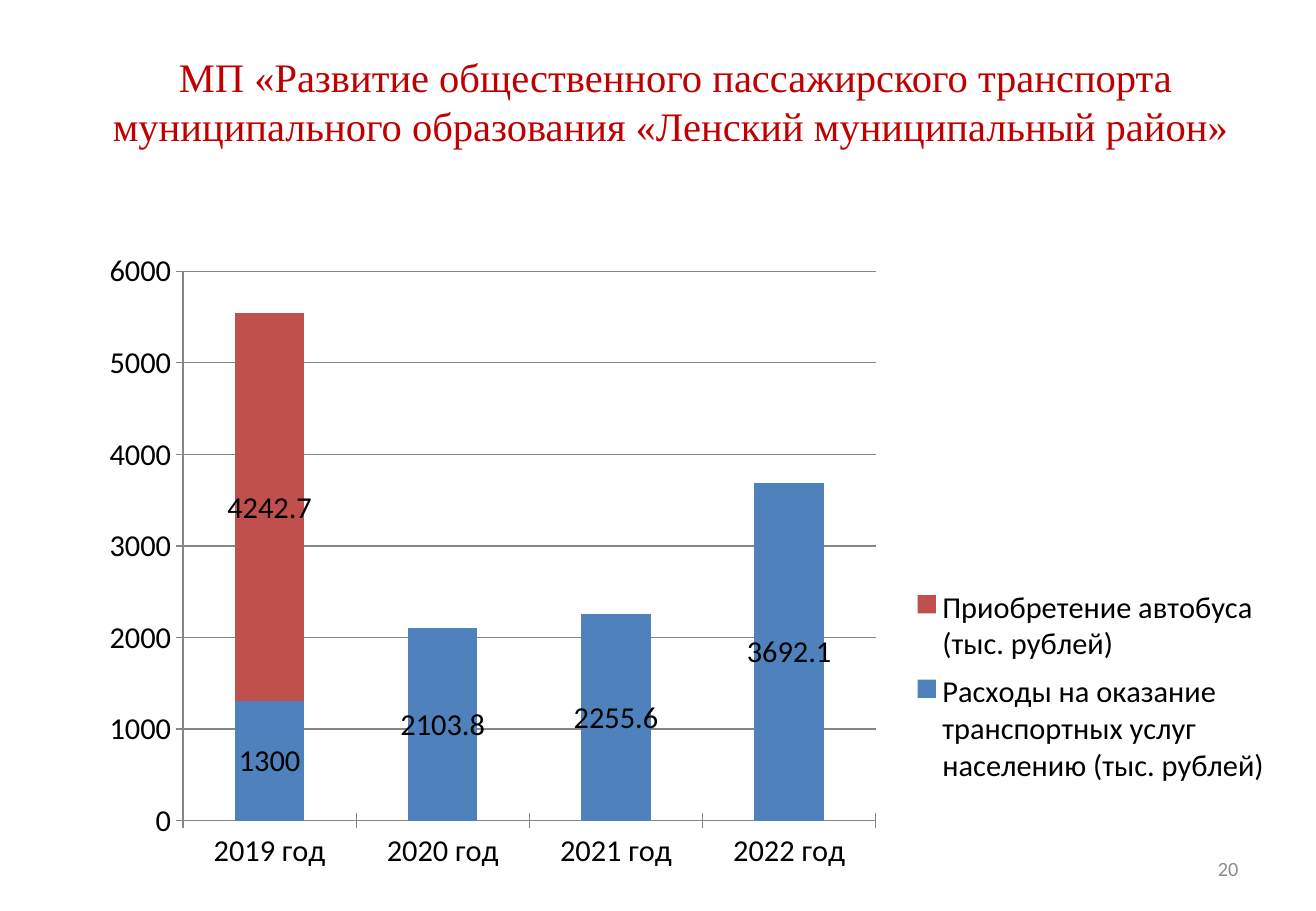
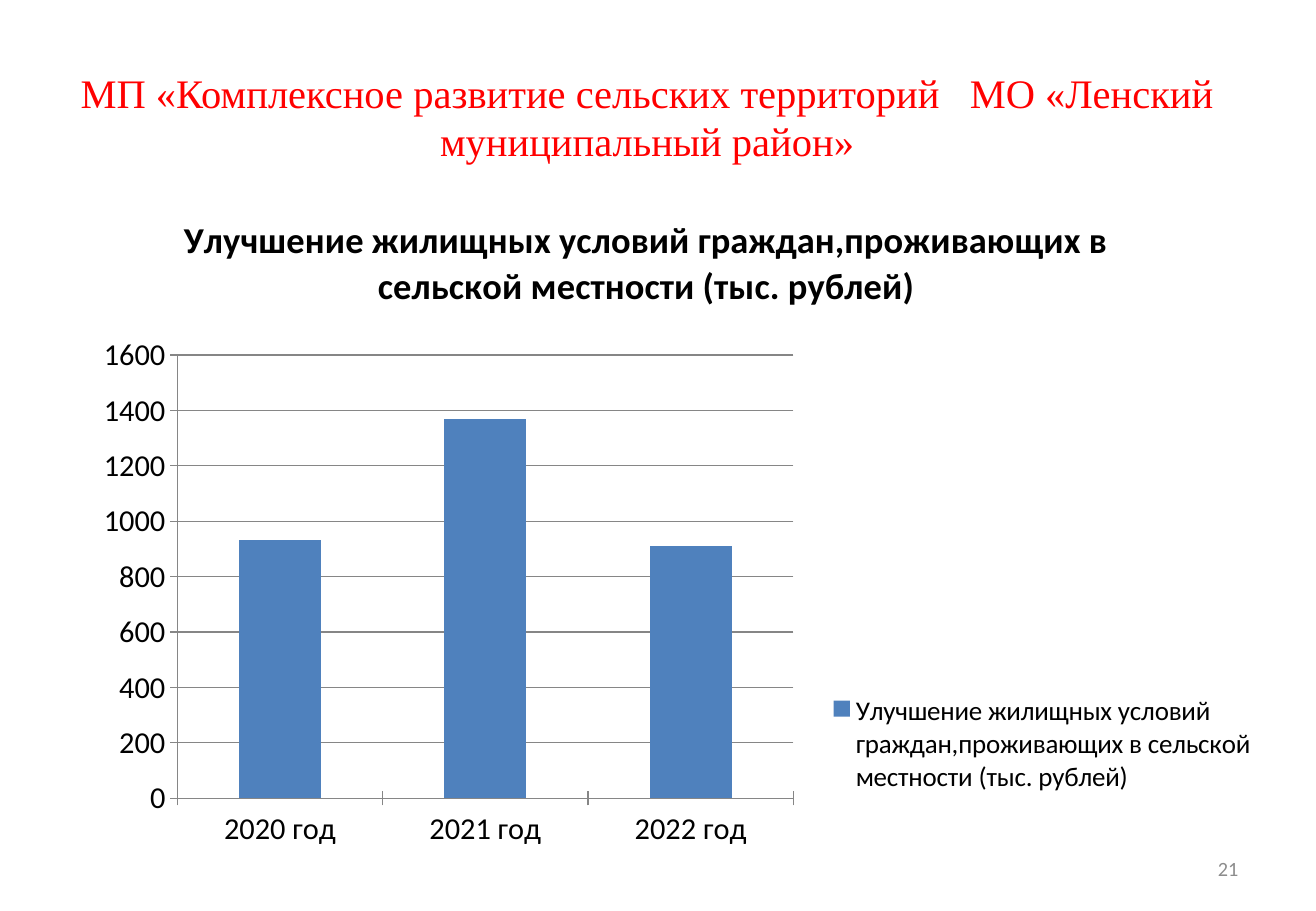
"""Builds two slides with stacked column charts of municipal programme spending."""
from dataclasses import dataclass
from typing import Optional

from lxml import etree
from pptx import Presentation
from pptx.chart.data import CategoryChartData
from pptx.dml.color import RGBColor
from pptx.enum.chart import XL_CHART_TYPE, XL_LEGEND_POSITION, XL_TICK_MARK
from pptx.enum.text import MSO_ANCHOR, PP_ALIGN
from pptx.oxml.ns import qn
from pptx.util import Inches, Pt

STACKED = XL_CHART_TYPE.COLUMN_STACKED
LEGEND_RIGHT = XL_LEGEND_POSITION.RIGHT
TICK_CROSS = XL_TICK_MARK.CROSS
TOP, MIDDLE = MSO_ANCHOR.TOP, MSO_ANCHOR.MIDDLE
CENTER, RIGHT = PP_ALIGN.CENTER, PP_ALIGN.RIGHT

BLACK = RGBColor(0x00, 0x00, 0x00)
GRAY = RGBColor(0x8C, 0x8C, 0x8C)
AXIS_GRAY = RGBColor(0x86, 0x86, 0x86)
DARK_RED = RGBColor(0xC0, 0x00, 0x00)
RED = RGBColor(0xFF, 0x00, 0x00)
BLUE = RGBColor(0x4F, 0x81, 0xBD)
BRICK = RGBColor(0xC0, 0x50, 0x4D)
SERIES_COLORS = (BLUE, BRICK)

BODY_FONT = "Calibri"
TITLE_FONT = "Times New Roman"
NUMBER_BOX = (7.76, 6.95, 2.53, 0.4)
HOUSING = "Улучшение жилищных условий граждан,проживающих в сельской местности (тыс. рублей)"

Box = tuple[float, float, float, float]


@dataclass(frozen=True)
class Series:
    name: str
    values: tuple[Optional[float], ...]


@dataclass(frozen=True)
class ChartSlide:
    number: int
    title: str
    title_color: RGBColor
    title_box: Box
    chart_box: Box
    plot_layout: Box
    legend_layout: Box
    legend_size: int
    categories: tuple[str, ...]
    series: tuple[Series, ...]
    axis_max: int
    axis_step: int
    show_values: bool = False
    chart_title: str = ""


SLIDES = (
    ChartSlide(
        number=20,
        title="МП «Развитие общественного пассажирского транспорта "
              "муниципального образования «Ленский муниципальный район» ",
        title_color=DARK_RED,
        title_box=(0.56, 0.38, 10, 0.91),
        chart_box=(0.72, 1.97, 9.83, 5.26),
        plot_layout=(0.08, 0.05, 0.58, 0.86),
        legend_layout=(0.69, 0.53, 0.3, 0.34),
        legend_size=18,
        categories=("2019 год", "2020 год", "2021 год", "2022 год"),
        series=(
            Series("Расходы на оказание транспортных услуг населению (тыс. рублей)",
                   (1300, 2103.8, 2255.6, 3692.1)),
            Series("Приобретение автобуса (тыс. рублей)", (4242.7, None, None, None)),
        ),
        axis_max=6000,
        axis_step=1000,
        show_values=True,
    ),
    ChartSlide(
        number=21,
        title="МП «Комплексное развитие сельских территорий   МО «Ленский муниципальный район»",
        title_color=RED,
        title_box=(0.47, 0.51, 9.71, 0.91),
        chart_box=(0.68, 1.54, 9.75, 5.53),
        plot_layout=(0.08, 0.25, 0.52, 0.66),
        legend_layout=(0.63, 0.74, 0.36, 0.18),
        legend_size=16,
        categories=("2020 год", "2021 год", "2022 год"),
        series=(Series(HOUSING, (930, 1370, 910)),),
        axis_max=1600,
        axis_step=200,
        chart_title=HOUSING,
    ),
)


def add_text(s, box: Box, text: str, font: str, size: int, color: RGBColor,
             align: PP_ALIGN, anchor: MSO_ANCHOR) -> None:
    tf = s.shapes.add_textbox(*map(Inches, box)).text_frame
    tf.word_wrap = True
    tf.vertical_anchor = anchor
    p = tf.paragraphs[0]
    p.text = text
    p.alignment = align
    p.font.name = font
    p.font.size = Pt(size)
    p.font.color.rgb = color


def set_layout(parent, index: int, inner: bool = False, **fractions: float) -> None:
    for old in parent.findall(qn("c:layout")):
        parent.remove(old)
    layout = etree.Element(qn("c:layout"))
    manual = etree.SubElement(layout, qn("c:manualLayout"))
    settings = {"layoutTarget": "inner"} if inner else {}
    settings |= {"xMode": "edge", "yMode": "edge"}
    settings |= {key: str(value) for key, value in fractions.items()}
    for tag, value in settings.items():
        etree.SubElement(manual, qn(f"c:{tag}")).set("val", value)
    parent.insert(index, layout)


def style_axis(axis) -> None:
    axis.major_tick_mark = TICK_CROSS
    axis.minor_tick_mark = XL_TICK_MARK.NONE
    axis.format.line.color.rgb = AXIS_GRAY
    axis.format.line.width = Pt(0.75)


def add_chart(s, spec_: ChartSlide) -> None:
    data = CategoryChartData()
    data.categories = spec_.categories
    for series in spec_.series:
        data.add_series(series.name, series.values)
    chart = s.shapes.add_chart(STACKED, *map(Inches, spec_.chart_box), data).chart
    chart.font.name = BODY_FONT
    chart.font.size = Pt(18)
    chart.font.color.rgb = BLACK

    plot = chart.plots[0]
    plot.gap_width = 150
    plot.overlap = 100
    plot.vary_by_categories = False
    for series, color in zip(plot.series, SERIES_COLORS):
        series.format.fill.solid()
        series.format.fill.fore_color.rgb = color
        if spec_.show_values:
            series.data_labels.show_value = True

    style_axis(chart.category_axis)
    axis = chart.value_axis
    style_axis(axis)
    axis.minimum_scale = 0
    axis.maximum_scale = spec_.axis_max
    axis.major_unit = spec_.axis_step
    axis.has_major_gridlines = True
    axis.major_gridlines.format.line.color.rgb = AXIS_GRAY
    axis.major_gridlines.format.line.width = Pt(0.75)

    chart.has_legend = True
    legend = chart.legend
    legend.position = LEGEND_RIGHT
    legend.include_in_layout = False
    legend.font.size = Pt(spec_.legend_size)

    root = chart.element if hasattr(chart, "element") else chart._chartSpace
    for tag, index, inner, box in (("c:plotArea", 0, True, spec_.plot_layout),
                                   ("c:legend", 1, False, spec_.legend_layout)):
        set_layout(next(root.iter(qn(tag))), index, inner, **dict(zip("xywh", box)))

    chart.has_title = bool(spec_.chart_title)
    if spec_.chart_title:
        p = chart.chart_title.text_frame.paragraphs[0]
        p.text = spec_.chart_title
        p.font.size = Pt(21.6)
        p.font.bold = True
        set_layout(next(root.iter(qn("c:title"))), 1, x=0.08, y=0.03)


def main() -> None:
    prs = Presentation()
    prs.slide_width, prs.slide_height = Inches(10.83), Inches(7.5)
    for item in SLIDES:
        s = prs.slides.add_slide(prs.slide_layouts[6])
        add_text(s, NUMBER_BOX, str(item.number), BODY_FONT, 12, GRAY, RIGHT, MIDDLE)
        add_text(s, item.title_box, item.title, TITLE_FONT, 24, item.title_color, CENTER, TOP)
        add_chart(s, item)
    prs.save("out.pptx")


if __name__ == "__main__":
    main()
